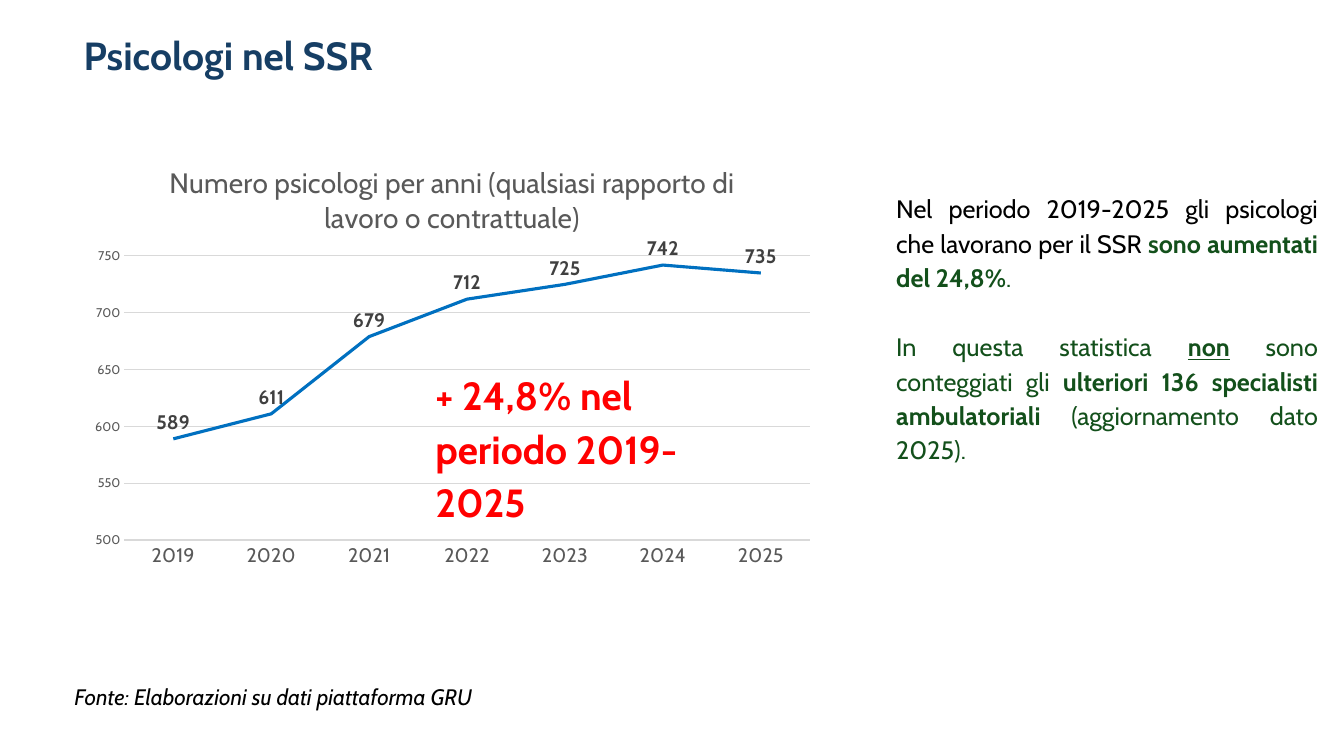
from dataclasses import dataclass

from lxml import etree
from pptx import Presentation
from pptx.chart.data import CategoryChartData
from pptx.dml.color import RGBColor
from pptx.enum import chart as ch, text
from pptx.oxml import ns
from pptx.util import Inches, Pt


@dataclass(frozen=True)
class Theme:
    font: str = "Cabin"
    navy: str = "163E64"
    black: str = "000000"
    green: str = "13501B"
    red: str = "FF0000"
    blue: str = "0070C0"
    grey: str = "595959"
    dark_grey: str = "404040"
    grid: str = "D9D9D9"
    headline: int = 28
    chart_title: int = 20
    body: int = 18
    source: int = 16
    label: int = 14
    tick: int = 9
    spacing: float = 1.14


class SlideBuilder:
    def __init__(self, prs, theme):
        self.theme = theme
        self.slide = prs.slides.add_slide(prs.slide_layouts[5])

    def style(self, font, size, color, bold=False, italic=False, underline=False):
        font.name = self.theme.font
        font.size = Pt(size)
        font.color.rgb = RGBColor.from_string(color)
        font.bold, font.italic, font.underline = bold, italic, underline

    def title(self, wording, box):
        sp = self.slide.shapes.title
        sp.left, sp.top, sp.width, sp.height = map(Inches, box)
        tf = sp.text_frame
        tf.text = wording
        tf.margin_left = Inches(0.19)
        tf.vertical_anchor = text.MSO_ANCHOR.MIDDLE
        p = tf.paragraphs[0]
        p.alignment = text.PP_ALIGN.LEFT
        p.line_spacing = 0.9
        self.style(p.runs[0].font, self.theme.headline, self.theme.navy, bold=True)

    def text(self, paragraphs, box, size, align=text.PP_ALIGN.LEFT,
             spacing=None, gap=0, wrap=True):
        """Each paragraph is a list of (wording, colour, font options)."""
        sp = self.slide.shapes.add_textbox(*map(Inches, box))
        tf = sp.text_frame
        tf.word_wrap = wrap
        for i, runs in enumerate(paragraphs):
            p = tf.add_paragraph() if i else tf.paragraphs[0]
            p.alignment = align
            p.line_spacing = spacing
            if i:
                p.space_before = Pt(gap)
            for wording, color, options in runs:
                r = p.add_run()
                r.text = wording
                self.style(r.font, size, color, **options)

    def line_chart(self, title, categories, values, box, plot):
        t = self.theme
        data = CategoryChartData()
        data.categories = categories
        data.add_series("Psicologi", values)
        frame = self.slide.shapes.add_chart(
            ch.XL_CHART_TYPE.LINE, *map(Inches, box), data)
        chart = frame.chart
        self.style(chart.font, 10, t.black)
        chart.has_legend = False
        chart.has_title = True
        tf = chart.chart_title.text_frame
        tf.text = title
        self.style(tf.paragraphs[0].runs[0].font, t.chart_title, t.grey)
        chart.chart_title.include_in_layout = False
        self.place_plot(chart, plot)

        # Axes
        cat, val = chart.category_axis, chart.value_axis
        for axis, size in ((cat, t.label), (val, t.tick)):
            axis.major_tick_mark = axis.minor_tick_mark = ch.XL_TICK_MARK.NONE
            self.style(axis.tick_labels.font, size, t.grey)
        val.minimum_scale, val.maximum_scale, val.major_unit = 500, 750, 50
        val.format.line.fill.background()
        cat.has_major_gridlines = False
        for line in (cat.format.line, val.major_gridlines.format.line):
            line.color.rgb = RGBColor.from_string(t.grid)
            line.width = Pt(0.75)

        # Series and its labels
        chart.plots[0].vary_by_categories = False
        series = chart.plots[0].series[0]
        series.smooth = False
        series.format.line.color.rgb = RGBColor.from_string(t.blue)
        series.format.line.width = Pt(2.25)
        labels = series.data_labels
        labels.show_value = True
        labels.position = ch.XL_LABEL_POSITION.ABOVE
        self.style(labels.font, t.label, t.dark_grey, bold=True)

    def place_plot(self, chart, plot):
        """Fix the inner plot area as fractions of the chart."""
        area = chart._chartSpace.find(".//" + ns.qn("c:plotArea"))
        for old in area.findall(ns.qn("c:layout")):
            area.remove(old)
        layout = etree.Element(ns.qn("c:layout"))
        manual = etree.SubElement(layout, ns.qn("c:manualLayout"))
        settings = [("layoutTarget", "inner"), ("xMode", "edge"), ("yMode", "edge")]
        settings += zip("xywh", plot)
        for tag, value in settings:
            etree.SubElement(manual, ns.qn("c:" + tag)).set("val", str(value))
        area.insert(0, layout)


def main():
    prs = Presentation()
    prs.slide_width, prs.slide_height = Inches(13.33), Inches(7.5)
    t = Theme()
    s = SlideBuilder(prs, t)
    bold = {"bold": True}

    # Title and source
    s.title("Psicologi nel SSR", (0.64, 0.22, 12.21, 0.7))
    s.text([[("Fonte: Elaborazioni su dati piattaforma GRU", t.black, {"italic": True})]],
           (0.64, 6.73, 4.42, 0.37), t.source, wrap=False)

    # Chart
    s.line_chart("Numero psicologi per anni (qualsiasi rapporto di lavoro o contrattuale)",
                 [str(year) for year in range(2019, 2026)],
                 (589, 611, 679, 712, 725, 742, 735),
                 (0.79, 1.43, 7.39, 4.27), (0.06, 0.26, 0.92, 0.66))

    # Commentary
    s.text([
        [("Nel periodo 2019-2025 gli psicologi che lavorano per il SSR ", t.black, {}),
         ("sono aumentati del 24,8%", t.green, bold),
         (".", t.green, {})],
        [("In questa statistica ", t.green, {}),
         ("non", t.green, {"bold": True, "underline": True}),
         (" sono conteggiati gli ", t.green, {}),
         ("ulteriori 136 specialisti ambulatoriali ", t.green, bold),
         ("(aggiornamento dato 2025).", t.green, {})],
    ], (8.79, 1.83, 4.38, 2.85), t.body, text.PP_ALIGN.JUSTIFY, t.spacing, gap=24.6)

    # Callout over the chart
    s.text([[("+ 24,8% nel periodo 2019-2025", t.red, bold)]],
           (4.22, 3.57, 3.48, 1.69), t.headline, spacing=t.spacing)

    prs.save("out.pptx")


if __name__ == "__main__":
    main()
